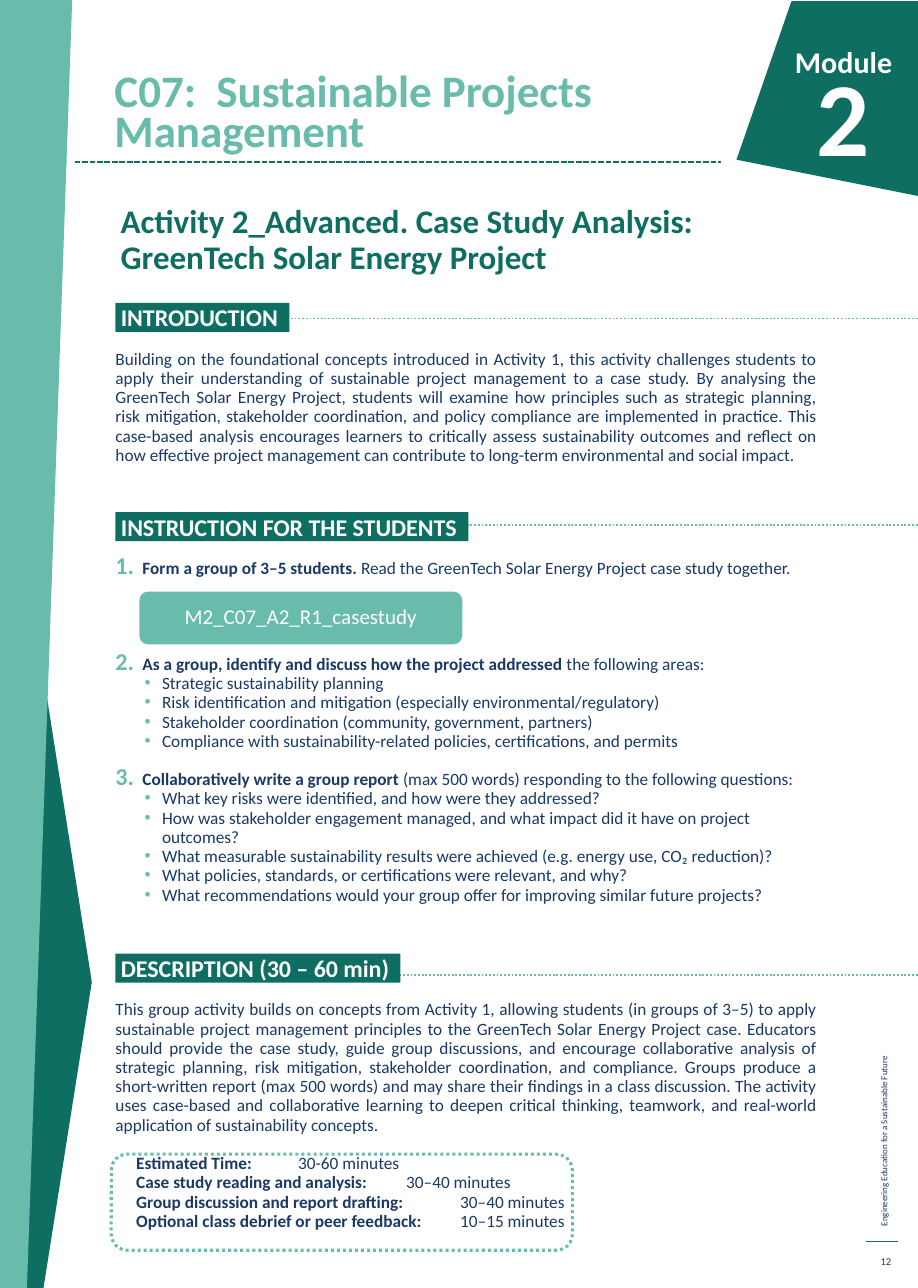
from lxml import etree
from pptx import Presentation
from pptx.dml.color import RGBColor
from pptx.enum import dml, shapes, text
from pptx.oxml import ns
from pptx.util import Pt

DARK = RGBColor(0x0E, 0x6E, 0x61)
MINT = RGBColor(0x69, 0xBC, 0xAC)
NAVY = RGBColor(0x1A, 0x39, 0x66)
WHITE = RGBColor(0xFF, 0xFF, 0xFF)
FONT = "Calibri"
LINE = 12.8
WIDTH, HEIGHT = 612, 858.96
LEFT, TEXT_WIDTH = 77, 467.4
ALIGN, ANCHOR = text.PP_ALIGN, text.MSO_ANCHOR


def child(parent, tag, **attrs):
    return etree.SubElement(parent, ns.qn(tag), attrs)


def write(tf, words, lead="", size=11.5, color=NAVY, bold=False, align=ALIGN.LEFT,
          line=None, before=0, margin=0, indent=0):
    p = tf.add_paragraph() if tf.text else tf.paragraphs[0]
    p.alignment = align
    p.space_before = Pt(before)
    if line:
        p.line_spacing = line
    for part, strong in ((lead, True), (words, bold)):
        if part:
            r = p.add_run()
            r.text = part
            r.font.name, r.font.size, r.font.bold = FONT, Pt(size), strong
            r.font.color.rgb = color
    pPr = p._p.get_or_add_pPr()
    pPr.set("marL", str(Pt(margin)))
    pPr.set("indent", str(Pt(indent)))
    return pPr


def bullet(pPr, number=None):
    child(child(pPr, "a:buClr"), "a:srgbClr", val=str(MINT))
    child(pPr, "a:buSzPct", val="140000" if number else "100000")
    child(pPr, "a:buFont", typeface=FONT if number else "Arial")
    if number:
        child(pPr, "a:buAutoNum", type="arabicPeriod", startAt=str(number))
    else:
        child(pPr, "a:buChar", char="•")


def frame(sp, insets=(7.2, 3.6, 7.2, 3.6), anchor=ANCHOR.TOP, wrap=True):
    tf = sp.text_frame
    tf.word_wrap = wrap
    tf.auto_size = text.MSO_AUTO_SIZE.NONE
    tf.vertical_anchor = anchor
    tf.margin_left, tf.margin_top, tf.margin_right, tf.margin_bottom = map(Pt, insets)
    return tf


def place(sp, x, y, w, h):
    sp.left, sp.top, sp.width, sp.height = Pt(x), Pt(y), Pt(w), Pt(h)


def text_box(s, x, y, w, h, **options):
    return frame(s.shapes.add_textbox(Pt(x), Pt(y), Pt(w), Pt(h)), **options)


def plain(sp, fill):
    sp.shadow.inherit = False
    sp.fill.solid()
    sp.fill.fore_color.rgb = fill
    sp.line.fill.background()


def box(s, kind, fill, x, y, w, h):
    sp = s.shapes.add_shape(kind, Pt(x), Pt(y), Pt(w), Pt(h))
    plain(sp, fill)
    return sp


def outline(s, x, y, points, fill):
    points = [(Pt(x + px), Pt(y + py)) for px, py in points]
    fb = s.shapes.build_freeform(*points[0])
    fb.add_line_segments(points[1:], close=True)
    plain(fb.convert_to_shape(), fill)


def rule(s, x1, x2, y, color, weight, dash=None):
    c = s.shapes.add_connector(shapes.MSO_CONNECTOR.STRAIGHT, Pt(x1), Pt(y), Pt(x2), Pt(y))
    c.line.color.rgb = color
    c.line.width = Pt(weight)
    if dash:
        c.line.dash_style = dash
    child(c._element.spPr, "a:effectLst")


def side_band(s, x, y, h):
    outline(s, x, y, [(29, h), (16.6, h), (16.6, 372), (59.8, 645.8), (61.2, 655)], DARK)
    outline(s, x, y, [(0, 0), (48.2, 0), (18, h), (0, h)], MINT)


def page_footer(s, x, y, w):
    sp = s.shapes.add_textbox(Pt(x - 149.8), Pt(y - 172), Pt(323.3), Pt(14.4))
    sp.rotation = 270
    write(frame(sp), "Engineering Education for a Sustainable Future", size=6)
    rule(s, x, x + w, y, DARK, 0.75)
    tf = text_box(s, x, y + 2.9, w + 2.2, 20.9, anchor=ANCHOR.MIDDLE)
    write(tf, "12", size=7, align=ALIGN.RIGHT)


def header(s, x, y, w):
    sp = s.shapes.title
    place(sp, x + 69.1, y + 56.2, 386, 75.6)
    tf = frame(sp, insets=(7.2, 3.6, 7.2, 27.4), anchor=ANCHOR.BOTTOM)
    write(tf, "C07:  Sustainable Projects Management", size=30, color=MINT, bold=True, line=Pt(26.8))
    rule(s, x + 49.7, x + 481, y + 108, DARK, 1.25, dml.MSO_LINE.SQUARE_DOT)
    outline(s, x + w - 121, y + 0.7, [(121, 0), (36.7, 0), (0, 105.8), (121, 130)], DARK)
    for words, size, dx, dy in (("Module", 20, 139.7, 25.2), ("2", 70, 154.8, 31)):
        tf = text_box(s, x + w - dx, y + dy, 129.6, 102.2)
        write(tf, words, size=size, color=WHITE, bold=True, align=ALIGN.RIGHT, before=22.7)
    tf = text_box(s, x + 73.4, y + 133.2, 473.8, 75.6)
    write(tf, "Activity 2_Advanced. Case Study Analysis: GreenTech Solar Energy Project",
          size=22, color=DARK, bold=True, line=0.9, before=8.5)


def heading(s, words, x, y, w, line_y):
    rule(s, 181.4, WIDTH, line_y, MINT, 1.25, dml.MSO_LINE.ROUND_DOT)
    sp = box(s, shapes.MSO_SHAPE.RECTANGLE, DARK, x, y - 5.4, w, 19.3)
    tf = frame(sp, insets=(3.6, 0, 0, 0), anchor=ANCHOR.MIDDLE, wrap=False)
    write(tf, words, size=16, color=WHITE, bold=True)


def prose(s, words, x, y, w, lines):
    tf = text_box(s, x, y, w, lines * LINE, insets=(0, 0, 0, 0))
    write(tf, words, align=ALIGN.JUSTIFY, line=Pt(LINE))


def instructions(s, x, y, w):
    sp = s.placeholders[1]
    place(sp, x, y, w, 18 * LINE)
    tf = frame(sp, insets=(0, 0, 0, 0))
    for number, (gap, lead, words, points) in enumerate(STEPS, 1):
        bullet(write(tf, words, lead=lead, line=Pt(LINE), before=gap * LINE,
                     margin=18, indent=-18), number)
        for point in points:
            bullet(write(tf, point, line=Pt(LINE), margin=31, indent=-11.5))
    sp = box(s, shapes.MSO_SHAPE.ROUNDED_RECTANGLE, MINT, x + 15.9, y + 21.9, 215.3, 35.3)
    tf = frame(sp, insets=(7.2, 0, 7.2, 2), anchor=ANCHOR.MIDDLE)
    write(tf, "M2_C07_A2_R1_casestudy", size=14, color=WHITE, align=ALIGN.CENTER)


def timing(s, x, y, w, h):
    sp = box(s, shapes.MSO_SHAPE.ROUNDED_RECTANGLE, WHITE, x, y, w, h)
    sp.fill.background()
    sp.line.color.rgb = MINT
    sp.line.width = Pt(2)
    sp.line.dash_style = dml.MSO_LINE.ROUND_DOT
    tf = text_box(s, x + 16.6, y - 0.2, w - 16.6, h, insets=(0, 0, 0, 0))
    for label, time, tab in TIMES:
        pPr = write(tf, "\t" + time, lead=label, line=Pt(LINE))
        child(child(pPr, "a:tabLst"), "a:tab", pos=str(Pt(tab)), algn="l")


INTRODUCTION = (
    "Building on the foundational concepts introduced in Activity 1, this activity challenges students to "
    "apply their understanding of sustainable project management to a case study. By analysing the "
    "GreenTech Solar Energy Project, students will examine how principles such as strategic planning, "
    "risk mitigation, stakeholder coordination, and policy compliance are implemented in practice. This "
    "case-based analysis encourages learners to critically assess sustainability outcomes and reflect on "
    "how effective project management can contribute to long-term environmental and social impact.")
DESCRIPTION = (
    "This group activity builds on concepts from Activity 1, allowing students (in groups of 3–5) to apply "
    "sustainable project management principles to the GreenTech Solar Energy Project case. Educators "
    "should provide the case study, guide group discussions, and encourage collaborative analysis of "
    "strategic planning, risk mitigation, stakeholder coordination, and compliance. Groups produce a "
    "short-written report (max 500 words) and may share their findings in a class discussion. The activity "
    "uses case-based and collaborative learning to deepen critical thinking, teamwork, and real-world "
    "application of sustainability concepts.")
STEPS = [
    (0, "Form a group of 3–5 students. ",
     "Read the GreenTech Solar Energy Project case study together.", []),
    (4, "As a group, identify and discuss how the project addressed ", "the following areas:", [
        "Strategic sustainability planning",
        "Risk identification and mitigation (especially environmental/regulatory)",
        "Stakeholder coordination (community, government, partners)",
        "Compliance with sustainability-related policies, certifications, and permits"]),
    (1, "Collaboratively write a group report ",
     "(max 500 words) responding to the following questions:", [
         "What key risks were identified, and how were they addressed?",
         "How was stakeholder engagement managed, and what impact did it have on project outcomes?",
         "What measurable sustainability results were achieved (e.g. energy use, CO₂ reduction)?",
         "What policies, standards, or certifications were relevant, and why?",
         "What recommendations would your group offer for improving similar future projects?"]),
]
TIMES = [
    ("Estimated Time: ", "30-60 minutes", 144),
    ("Case study reading and analysis: ", "30–40 minutes", 216),
    ("Group discussion and report drafting: ", "30–40 minutes", 216),
    ("Optional class debrief or peer feedback: ", "10–15 minutes", 216),
]


def main():
    prs = Presentation()
    prs.slide_width, prs.slide_height = Pt(WIDTH), Pt(HEIGHT)
    s = prs.slides.add_slide(prs.slide_layouts[1])
    side_band(s, 0, 0, HEIGHT)
    page_footer(s, 577.4, 828, 21.6)
    header(s, 0, 0, WIDTH)
    heading(s, "INTRODUCTION", LEFT, 207.4, 116, 212.4)
    prose(s, INTRODUCTION, LEFT, 233, TEXT_WIDTH, 6)
    heading(s, "INSTRUCTION FOR THE STUDENTS", LEFT, 347, 235.3, 349.9)
    instructions(s, LEFT, 372.6, TEXT_WIDTH)
    heading(s, "DESCRIPTION (30 – 60 min)", LEFT, 641.4, 190, 650.2)
    prose(s, DESCRIPTION, LEFT, 667, TEXT_WIDTH, 7)
    timing(s, 74.2, 769.7, 307.4, 64.1)
    prs.save("out.pptx")


if __name__ == "__main__":
    main()
